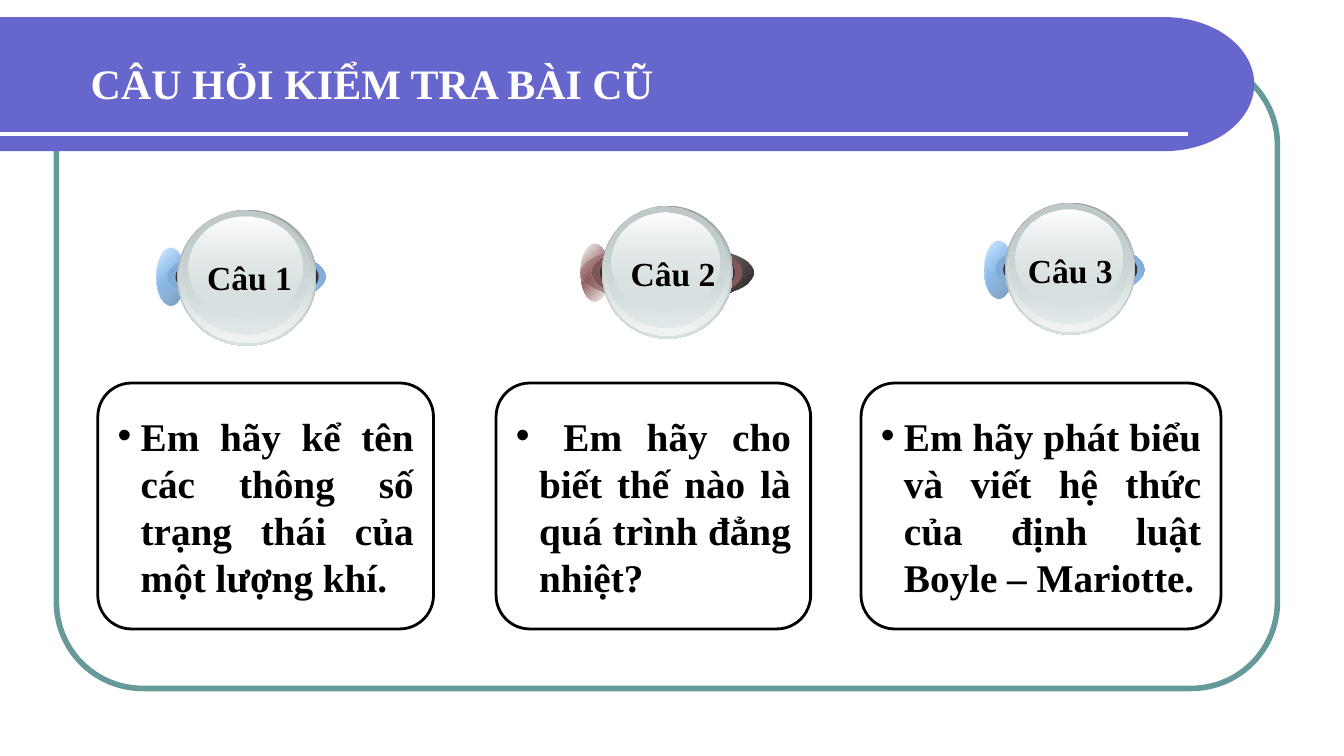
import math

import pptx
import pptx.dml.color
import pptx.enum.shapes
import pptx.enum.text
import pptx.oxml.ns
import pptx.util
from lxml import etree

RGB = pptx.dml.color.RGBColor
SHAPE = pptx.enum.shapes.MSO_SHAPE
ALIGN = pptx.enum.text.PP_ALIGN
ANCHOR = pptx.enum.text.MSO_ANCHOR
FIT = pptx.enum.text.MSO_AUTO_SIZE
qn = pptx.oxml.ns.qn

SCALE = 9144  # EMU in one px, 100 px to the inch
WHITE = RGB(0xFF, 0xFF, 0xFF)
BLACK = RGB(0x00, 0x00, 0x00)
TEAL = RGB(0x66, 0x99, 0x99)
VIOLET = RGB(0x66, 0x66, 0xCC)
BLUE = RGB(0x99, 0xCC, 0xFF)
MAROON = RGB(0x99, 0x66, 0x66)
DARK = RGB(0x33, 0x33, 0x33)
STEEL = RGB(0x99, 0xA1, 0xA2)
ASH = RGB(0xC1, 0xCB, 0xCC)
SILVER = RGB(0xD6, 0xE1, 0xE2)
PEARL = RGB(0xF2, 0xF5, 0xF5)

# Glass layers: left, top, width, height as shares of the ball, then stops
GLASS = [
    (0, 0, 1, 1, [(0, STEEL, 100), (100, SILVER, 100)]),
    (0.01, 0.01, 0.98, 0.97, [(0, SILVER, 0), (100, PEARL, 100)]),
    (0.02, 0.01, 0.93, 0.91, [(0, ASH, 100), (100, SILVER, 48)]),
    (0.08, 0.05, 0.82, 0.74, [(0, WHITE, 100), (100, SILVER, 38)]),
]


def px(num):
    return pptx.util.Emu(round(num) * SCALE)


def dim(color, part):
    return RGB(*(round(band * part) for band in color))


class Deck:
    font = "Times New Roman"

    def __init__(self):
        self.prs = pptx.Presentation()
        self.prs.slide_width, self.prs.slide_height = px(1333), px(750)
        self.slide = self.prs.slides.add_slide(self.prs.slide_layouts[5])
        self.shapes = self.slide.shapes

    def paint(self, shape, fill=None, line=None, width=0):
        shape.shadow.inherit = False
        if fill is None:
            shape.fill.background()
        else:
            shape.fill.solid()
            shape.fill.fore_color.rgb = fill
        if line is None:
            shape.line.fill.background()
        else:
            shape.line.color.rgb = line
            shape.line.width = pptx.util.Pt(width)

    def label(self, shape, text, size, color, align, **frame):
        for name, value in frame.items():
            setattr(shape.text_frame, name, value)
        para = shape.text_frame.paragraphs[0]
        para.alignment = align
        run = para.add_run()
        run.text = text
        look = {"name": self.font, "size": pptx.util.Pt(size), "bold": True}
        for name, value in look.items():
            setattr(run.font, name, value)
        run.font.color.rgb = color
        return para

    def title(self, text, *box):
        shape = self.shapes.title
        for name, value in zip(("left", "top", "width", "height"), box):
            setattr(shape, name, px(value))
        self.label(shape, text, 30, WHITE, ALIGN.LEFT, word_wrap=True,
                   auto_size=FIT.NONE, vertical_anchor=ANCHOR.MIDDLE)
        # Bring the title above the banner
        self.shapes._spTree.append(shape._element)

    def round_box(self, box, **style):
        shape = self.shapes.add_shape(SHAPE.ROUNDED_RECTANGLE, *map(px, box))
        shape.adjustments[0] = 0.137
        self.paint(shape, **style)
        return shape

    def banner(self, left, top, mid, right, low):
        half = (low - top) / 2
        turns = [math.radians(deg) for deg in range(-90, 91, 3)]
        dots = [(round((mid + (right - mid) * math.cos(turn)) * SCALE),
                 round((top + half + half * math.sin(turn)) * SCALE))
                for turn in turns]
        edge = self.shapes.build_freeform(px(left), px(top))
        edge.add_line_segments(dots + [(px(left), px(low))], close=True)
        self.paint(edge.convert_to_shape(), fill=VIOLET)

    def rule(self, left, right, top, color, width):
        line = self.shapes.add_connector(
            pptx.enum.shapes.MSO_CONNECTOR.STRAIGHT,
            px(left), px(top), px(right), px(top))
        line.line.color.rgb = color
        line.line.width = pptx.util.Pt(width)
        etree.SubElement(line._element.spPr, qn("a:effectLst"))

    def oval(self, box, fill=None, stops=(), angle=0):
        shape = self.shapes.add_shape(SHAPE.OVAL, *map(px, box))
        self.paint(shape, fill=fill)
        if not stops:
            return
        shape.fill.gradient()
        grad = shape._element.spPr.find(qn("a:gradFill"))
        for child in list(grad):
            grad.remove(child)
        group = etree.SubElement(grad, qn("a:gsLst"))
        for place, color, alpha in stops:
            stop = etree.SubElement(group, qn("a:gs"), pos=str(place * 1000))
            tint = etree.SubElement(stop, qn("a:srgbClr"), val=str(color))
            if alpha < 100:
                etree.SubElement(tint, qn("a:alpha"), val=str(alpha * 1000))
        etree.SubElement(grad, qn("a:lin"), ang=str(angle * 60000), scaled="1")

    def ball(self, text, left, top, wide, high, color, tail, end, start):
        # Ring behind the ball
        shade = dim(color, 0.765)
        disc = (left, top, 28, 57)
        ring = (left + 11, top, wide, 57)
        self.oval(disc, angle=45, stops=[
            (0, WHITE, 100), (50, color, 100), (100, WHITE, 100)])
        self.oval((left, top, tail, 57), angle=45, stops=[
            (0, color, 32), (100, *end)])
        self.oval(ring, angle=315, stops=[
            (0, shade, 100), (50, color, 100), (100, shade, 100)])
        self.oval(ring, angle=45, stops=[
            (0, dim(color, 0.82), 100), (100, color, 0)])
        self.oval((left + 19, top, wide - 15, 57), fill=DARK)
        # Glass ball
        size = wide - 19
        for x, y, w, h, stops in GLASS:
            self.oval((left + 21 + x * size, top - 38 + y * high,
                       w * size, h * high), stops=stops, angle=90)
        # Label
        box = self.shapes.add_textbox(*map(px, (start, top + 4, 105, 51)))
        self.label(box, text, 24, BLACK, ALIGN.CENTER, word_wrap=False,
                   auto_size=FIT.SHAPE_TO_FIT_TEXT)

    def card(self, text, left, wide):
        shape = self.round_box((left, 380, wide, 244),
                               fill=WHITE, line=BLACK, width=2)
        para = self.label(shape, text, 28, BLACK, ALIGN.JUSTIFY,
                          word_wrap=True, vertical_anchor=ANCHOR.MIDDLE)
        props = para._p.get_or_add_pPr()
        props.set("marL", str(px(23)))
        props.set("indent", str(-px(23)))
        etree.SubElement(props, qn("a:buFont"), typeface="Arial")
        etree.SubElement(props, qn("a:buChar"), char="•")


def main():
    deck = Deck()
    # Frame and banner
    deck.round_box((56, 58, 1211, 625), line=TEAL, width=4)
    deck.banner(0, 17, 1155, 1244, 150)
    deck.rule(0, 1178, 133, WHITE, 3)
    deck.title("CÂU HỎI KIỂM TRA BÀI CŨ", 80, 32, 1169, 100)

    # Numbered balls
    sky = (BLUE, 28, (dim(BLUE, 0.714), 100))
    wine = (MAROON, 171, (BLACK, 90))
    balls = [(155, 246, 157, 135, *sky, 195),
             (576, 242, 149, 132, *wine, 615),
             (976, 239, 148, 131, *sky, 1009)]
    for num, ball in enumerate(balls, 1):
        deck.ball(f"Câu {num}", *ball)

    # Question cards
    cards = [
        ("Em hãy kể tên các thông số trạng thái của một lượng khí.", 97, 333),
        (" Em hãy cho biết thế nào là quá trình đẳng nhiệt?", 492, 312),
        ("Em hãy phát biểu và viết hệ thức của định luật Boyle – Mariotte.",
         854, 357),
    ]
    for card in cards:
        deck.card(*card)
    deck.prs.save("out.pptx")


if __name__ == "__main__":
    main()
